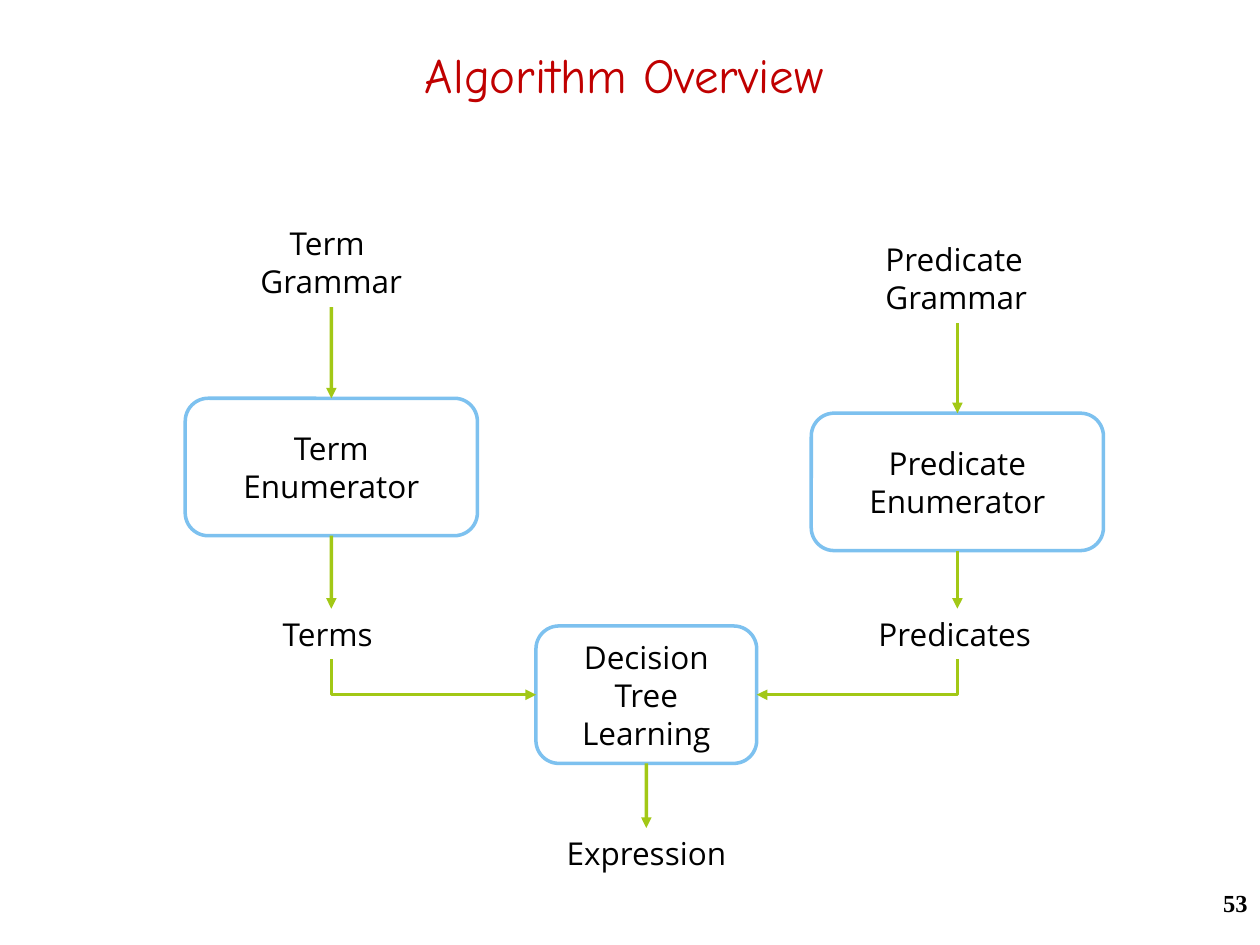
from lxml import etree
from pptx import Presentation
from pptx.dml.color import RGBColor
from pptx.enum.shapes import MSO_CONNECTOR, MSO_SHAPE
from pptx.enum.text import MSO_ANCHOR, MSO_AUTO_SIZE, PP_ALIGN
from pptx.oxml.ns import qn
from pptx.util import Cm, Pt

CENTER, LEFT, RIGHT = PP_ALIGN.CENTER, PP_ALIGN.LEFT, PP_ALIGN.RIGHT
MIDDLE = MSO_ANCHOR.MIDDLE
FIT = MSO_AUTO_SIZE.SHAPE_TO_FIT_TEXT
STRAIGHT, ELBOW = MSO_CONNECTOR.STRAIGHT, MSO_CONNECTOR.ELBOW
TOP_SIDE, LEFT_SIDE, BOTTOM_SIDE, RIGHT_SIDE = range(4)

COLORS = {"title": "C00000", "text": "000000", "box": "FFFFFF",
          "border": "7DC1EF", "arrow": "A2C816"}
BODY_FONT = "Open Sans"

# Column centres and box height in cm
TERM_X, TREE_X, PREDICATE_X = 6.68, 13.03, 19.3
BOX_H = 2.77


def rgb(name):
    return RGBColor.from_string(COLORS[name])


def write(tf, lines, align=CENTER, size=18, font=BODY_FONT, color="text", bold=False):
    for i, line in enumerate(lines):
        p = tf.paragraphs[0] if i == 0 else tf.add_paragraph()
        p.alignment = align
        r = p.add_run()
        r.text = line
        r.font.name = font
        r.font.size = Pt(size)
        r.font.bold = bold
        r.font.color.rgb = rgb(color)


def add_title(s, text):
    sp = s.shapes.title
    sp.left, sp.top, sp.width, sp.height = Cm(1.7), Cm(0.64), Cm(21.77), Cm(1.7)
    sp.text_frame.vertical_anchor = MIDDLE
    write(sp.text_frame, [text], size=28, font="Comic Neue", color="title")


def add_page_number(s, number):
    sp = s.shapes.add_textbox(Cm(20.12), Cm(17.78), Cm(5.28), Cm(1.27))
    sp.text_frame.word_wrap = True
    write(sp.text_frame, [number], RIGHT, 14, "Times New Roman", bold=True)


def add_label(s, x, top, width, lines, align=CENTER):
    """Add unwrapped text centred on column x."""
    height = 1.8 if len(lines) == 2 else 1.02
    sp = s.shapes.add_textbox(Cm(x - width / 2), Cm(top), Cm(width), Cm(height))
    sp.text_frame.word_wrap = False
    sp.text_frame.auto_size = FIT
    write(sp.text_frame, lines, align)
    return sp


def add_box(s, x, top, width, lines):
    """Add a rounded process box centred on column x."""
    sp = s.shapes.add_shape(MSO_SHAPE.ROUNDED_RECTANGLE, Cm(x - width / 2),
                            Cm(top), Cm(width), Cm(BOX_H))
    sp.shadow.inherit = False
    sp.fill.solid()
    sp.fill.fore_color.rgb = rgb("box")
    sp.line.color.rgb = rgb("border")
    sp.line.width = Pt(2)
    sp.text_frame.word_wrap = True
    sp.text_frame.vertical_anchor = MIDDLE
    write(sp.text_frame, lines)
    return sp


def add_arrow(s, start, end, kind=STRAIGHT, end_side=TOP_SIDE):
    cxn = s.shapes.add_connector(kind, 0, 0, 0, 0)
    cxn.begin_connect(start, BOTTOM_SIDE)
    cxn.end_connect(end, end_side)
    cxn.line.color.rgb = rgb("arrow")
    cxn.line.width = Pt(2)
    ln = cxn.line._get_or_add_ln()
    etree.SubElement(ln, qn("a:tailEnd"), type="triangle")
    etree.SubElement(cxn._element.spPr, qn("a:effectLst"))
    return cxn


def add_bent_arrow(s, start, end, end_side):
    """Add an arrow that goes down, then sideways into the end box."""
    cxn = add_arrow(s, start, end, ELBOW, end_side)
    x1, y1, x2, y2 = cxn.begin_x, cxn.begin_y, cxn.end_x, cxn.end_y
    run, drop = abs(x2 - x1), y2 - y1
    # The preset runs sideways first, so it is turned a quarter about its centre
    cxn.left, cxn.top = (x1 + x2 - drop) // 2, (y1 + y2 - run) // 2
    cxn.width, cxn.height = drop, run
    xfrm = cxn._element.spPr.find(qn("a:xfrm"))
    for flip in ("flipH", "flipV"):
        xfrm.attrib.pop(flip, None)
    if x2 > x1:
        xfrm.set("rot", "16200000")
        xfrm.set("flipH", "1")
    else:
        xfrm.set("rot", "5400000")
    cxn._element.spPr.find(qn("a:prstGeom")).set("prst", "bentConnector2")


def main():
    prs = Presentation()
    prs.slide_width, prs.slide_height = Cm(25.4), Cm(19.05)
    s = prs.slides.add_slide(prs.slide_layouts[5])
    add_title(s, "Algorithm Overview")
    add_page_number(s, "53")

    tree = add_box(s, TREE_X, 12.62, 4.45, ["Decision Tree", "Learning"])
    expression = add_label(s, TREE_X, 16.69, 3.91, ["Expression"])
    add_arrow(s, tree, expression)

    branches = [
        (TERM_X, 4.39, ["Term ", "Grammar"], CENTER, 8.03, ["Term Enumerator"],
         "Terms", 2.46, LEFT_SIDE),
        (PREDICATE_X, 4.72, ["Predicate", "Grammar"], LEFT, 8.33,
         ["Predicate", "Enumerator"], "Predicates", 3.68, RIGHT_SIDE),
    ]
    for x, top, source, align, box_top, step, result, width, side in branches:
        grammar = add_label(s, x, top, 3.4, source, align)
        enumerator = add_box(s, x, box_top, 5.89, step)
        output = add_label(s, x, 12.27, width, [result], LEFT)
        add_arrow(s, grammar, enumerator)
        add_arrow(s, enumerator, output)
        add_bent_arrow(s, output, tree, side)

    prs.save("out.pptx")


if __name__ == "__main__":
    main()
